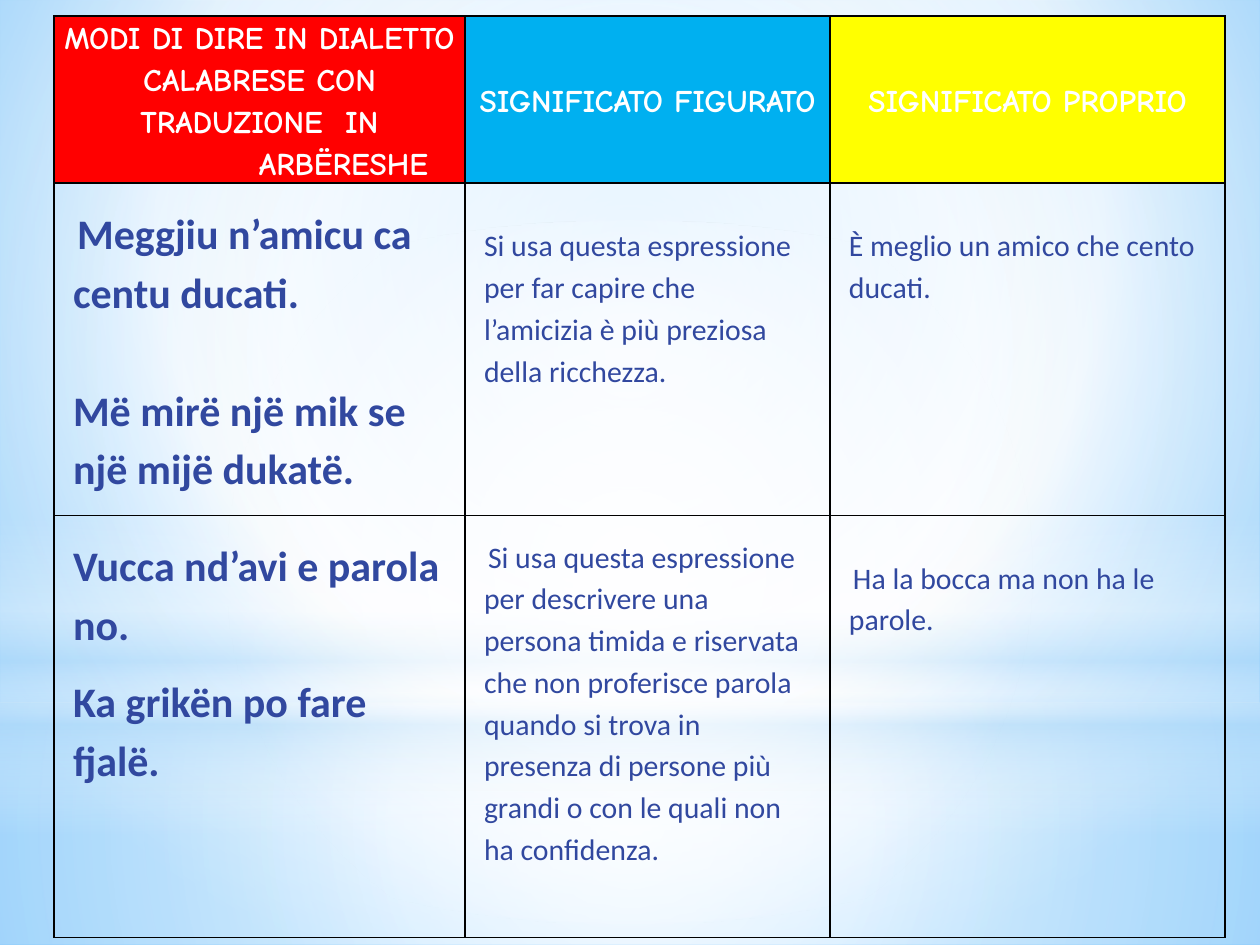
from lxml import etree
from pptx import Presentation
from pptx.dml.color import RGBColor
from pptx.enum.shapes import MSO_SHAPE as Shape
from pptx.enum.text import MSO_ANCHOR as Anchor, PP_ALIGN as Align
from pptx.oxml.ns import qn
from pptx.util import Emu, Pt

PX = 914400 / 126
LEFT, TOP = 54, 16
COLUMNS = (411, 365, 395)
ROWS = (155, 292, 422)
TABLE_HEIGHT = 924
PADDING = 19
LOWERED = 40  # top padding of the cells whose text starts lower
NUDGE = 4  # first-line indent
BLUE, WHITE, BLACK = "31489F", "FFFFFF", "000000"
SKY = "B4DCFA"
CENTRE = (50, 50, 50, 50)

# Fill, then paragraphs as (text, left indent)
HEADERS = [
    ("FF0000", [("MODI DI DIRE IN DIALETTO CALABRESE CON TRADUZIONE  IN", 0),
                ("ARBËRESHE", 168)]),
    ("00B0F0", [("SIGNIFICATO FIGURATO", 0)]),
    ("FFFF00", [("SIGNIFICATO PROPRIO", 0)]),
]

# Sayings, gap between them in points, first-line indent
SAYINGS = [
    (["Meggjiu n’amicu ca centu ducati.",
      "Më mirë një mik se një mijë dukatë."], 33.5, NUDGE),
    (["Vucca nd’avi e parola no.", "Ka grikën po fare fjalë."], 10, 0),
]

# Text, top padding, first-line indent
MEANINGS = [
    [("Si usa questa espressione per far capire che l’amicizia è più preziosa "
      "della ricchezza.", LOWERED, 0),
     ("È meglio un amico che cento ducati.", LOWERED, 0)],
    [("Si usa questa espressione per descrivere una persona timida e riservata "
      "che non proferisce parola quando si trova in presenza di persone più "
      "grandi o con le quali non ha confidenza.", PADDING, NUDGE),
     ("Ha la bocca ma non ha le parole.", LOWERED, NUDGE)],
]

# Shape, top, height, stops (position, colour, opacity), focus of the gradient
GLOWS = [
    (Shape.RECTANGLE, 703, 242,
     [(0, WHITE, 91), (37, WHITE, 76), (100, SKY, 79)], CENTRE),
    (Shape.RECTANGLE, 0, 703,
     [(0, WHITE, 89), (48, WHITE, 62), (100, SKY, 79)], CENTRE),
    (Shape.RECTANGLE, 519, 315,
     [(0, WHITE, 0), (29, WHITE, 30), (45, SKY, 40), (55, WHITE, 26),
      (65, SKY, 60), (100, WHITE, 0)], None),
    (Shape.OVAL, 221, 703, [(0, WHITE, 100), (56, WHITE, 0)], CENTRE),
]


def px(length):
    return Emu(round(length * PX))


def color(value):
    return RGBColor.from_string(value)


def set_gradient(fill, properties, stops, focus):
    """Replace a solid fill by a circular gradient, or a vertical one."""
    fill.solid()
    solid = properties.find(qn("a:solidFill"))
    gradient = etree.Element(qn("a:gradFill"), rotWithShape="1")
    stop_list = etree.SubElement(gradient, qn("a:gsLst"))
    for position, value, opacity in stops:
        stop = etree.SubElement(stop_list, qn("a:gs"), pos=str(position * 1000))
        tint = etree.SubElement(stop, qn("a:srgbClr"), val=value)
        etree.SubElement(tint, qn("a:alpha"), val=str(opacity * 1000))
    if focus:
        circle = etree.SubElement(gradient, qn("a:path"), path="circle")
        sides = {side: str(part * 1000) for side, part in zip("ltrb", focus)}
        etree.SubElement(circle, qn("a:fillToRect"), **sides)
    else:
        etree.SubElement(gradient, qn("a:lin"), ang=str(90 * 60000), scaled="0")
    properties.replace(solid, gradient)


def add_background(slide):
    fill = slide.background.fill
    fill.solid()
    properties = slide.element.find(".//" + qn("p:bgPr"))
    stops = [(0, "9ED5FF", 100), (60, WHITE, 100), (100, "5BB9FF", 100)]
    set_gradient(fill, properties, stops, (20, 10, 20, 60))


def add_glow(slide, kind, top, height, stops, focus):
    shape = slide.shapes.add_shape(kind, 0, px(top), px(1260), px(height))
    shape.shadow.inherit = False
    shape.line.fill.background()
    set_gradient(shape.fill, shape.element.spPr, stops, focus)


def set_borders(cell):
    properties = cell._tc.get_or_add_tcPr()
    for index, side in enumerate(("lnL", "lnR", "lnT", "lnB")):
        line = etree.Element(qn("a:" + side), w=str(Pt(1)))
        solid = etree.SubElement(line, qn("a:solidFill"))
        etree.SubElement(solid, qn("a:srgbClr"), val=BLACK)
        properties.insert(index, line)


def set_margins(cell, side, top, bottom):
    cell.margin_left = cell.margin_right = px(side)
    cell.margin_top, cell.margin_bottom = px(top), px(bottom)


def write_paragraph(cell, index, text, size, value, bold=False,
                    font="Calibri", left=0, first=0):
    frame = cell.text_frame
    paragraph = frame.paragraphs[0] if index == 0 else frame.add_paragraph()
    paragraph.line_spacing = 1.15
    properties = paragraph._p.get_or_add_pPr()
    properties.set("marL", str(px(left)))
    properties.set("indent", str(px(first)))
    run = paragraph.add_run()
    run.text = text
    run.font.name, run.font.size, run.font.bold = font, Pt(size), bold
    run.font.color.rgb = color(value)
    return paragraph


def fill_header(cell, value, lines):
    cell.fill.solid()
    cell.fill.fore_color.rgb = color(value)
    cell.vertical_anchor = Anchor.MIDDLE
    set_margins(cell, 6, 0, 0)
    for index, (text, left) in enumerate(lines):
        paragraph = write_paragraph(cell, index, text, 18, WHITE, True,
                                    "Comic Neue", left)
        paragraph.alignment = Align.CENTER


def fill_sayings(cell, sayings, gap, first):
    cell.fill.background()
    set_margins(cell, PADDING, PADDING, PADDING)
    for index, text in enumerate(sayings):
        paragraph = write_paragraph(cell, index, text, 24, BLUE, True,
                                    first=0 if index else first)
        if index:
            paragraph.space_before = Pt(gap)


def fill_meaning(cell, text, top, first):
    cell.fill.background()
    set_margins(cell, PADDING, top, PADDING)
    write_paragraph(cell, 0, text, 17, BLUE, first=first)


def add_sayings_table(slide):
    frame = slide.shapes.add_table(len(ROWS), len(COLUMNS), px(LEFT), px(TOP),
                                   px(sum(COLUMNS)), px(sum(ROWS)))
    table = frame.table
    table.first_row = table.horz_banding = False
    for column, width in zip(table.columns, COLUMNS):
        column.width = px(width)
    for row, height in zip(table.rows, ROWS):
        row.height = px(height)
    frame.height = px(TABLE_HEIGHT)

    for column, header in enumerate(HEADERS):
        fill_header(table.cell(0, column), *header)
    for row, (sayings, meanings) in enumerate(zip(SAYINGS, MEANINGS), 1):
        fill_sayings(table.cell(row, 0), *sayings)
        for column, meaning in enumerate(meanings, 1):
            fill_meaning(table.cell(row, column), *meaning)
    for cell in table.iter_cells():
        set_borders(cell)


def main():
    presentation = Presentation()
    presentation.slide_width, presentation.slide_height = px(1260), px(945)
    slide = presentation.slides.add_slide(presentation.slide_layouts[6])

    # Sky backdrop
    add_background(slide)
    for glow in GLOWS:
        add_glow(slide, *glow)

    # Sayings and their meanings
    add_sayings_table(slide)
    presentation.save("out.pptx")


if __name__ == "__main__":
    main()
